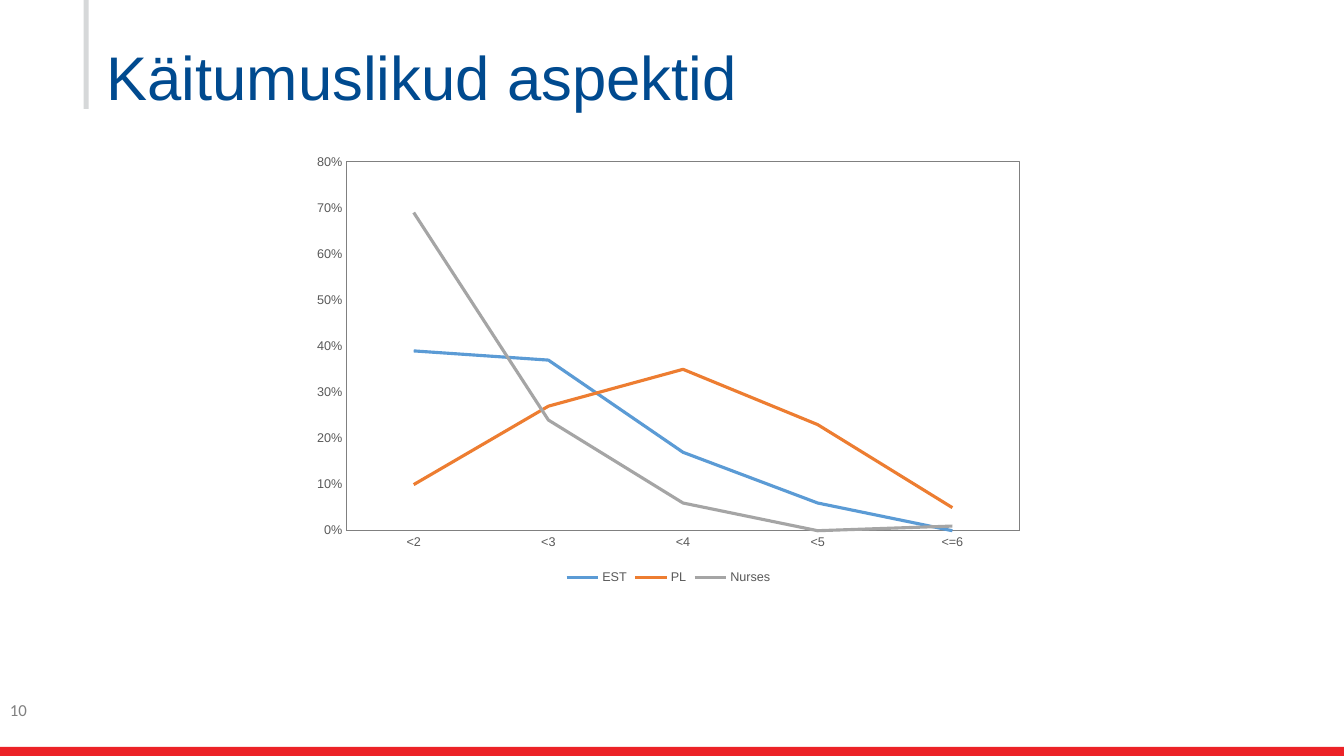
from lxml import etree
from pptx import Presentation
from pptx.chart.data import CategoryChartData
from pptx.dml.color import RGBColor
from pptx.enum import chart as ch, shapes, text
from pptx.util import Inches, Pt

RED = RGBColor(0xEC, 0x22, 0x27)
RULE_GREY = RGBColor(0xD6, 0xD8, 0xD9)
TITLE_BLUE = RGBColor(0x00, 0x4A, 0x8F)
MID_GREY = RGBColor(0x80, 0x80, 0x80)
LABEL_GREY = RGBColor(0x59, 0x59, 0x59)
BLACK = RGBColor(0, 0, 0)

WIDTH, HEIGHT = 13.33, 7.5
AGES = ["<2", "<3", "<4", "<5", "<=6"]
SERIES = [
    ("EST", RGBColor(0x5B, 0x9B, 0xD5), [0.39, 0.37, 0.17, 0.06, 0]),
    ("PL", RGBColor(0xED, 0x7D, 0x31), [0.1, 0.27, 0.35, 0.23, 0.05]),
    ("Nurses", RGBColor(0xA5, 0xA5, 0xA5), [0.69, 0.24, 0.06, 0, 0.01]),
]


def set_font(font, size, color, name="Arial"):
    font.size, font.name, font.bold = Pt(size), name, False
    font.color.rgb = color


def add_bar(s, box, color):
    bar = s.shapes.add_shape(shapes.MSO_SHAPE.RECTANGLE, *map(Inches, box))
    bar.shadow.inherit = False
    bar.fill.solid()
    bar.fill.fore_color.rgb = color
    bar.line.fill.background()


def add_text(s, box, words, *, size, color, name="Arial", spacing=1.0):
    tf = s.shapes.add_textbox(*map(Inches, box)).text_frame
    tf.word_wrap = True
    tf.vertical_anchor = text.MSO_ANCHOR.TOP
    p = tf.paragraphs[0]
    p.line_spacing = spacing
    r = p.add_run()
    r.text = words
    set_font(r.font, size, color, name)


def style_plot_area(chart, left, top, width, height):
    """Fix the inner plot area, as shares of the chart, and outline it."""
    plot_area = chart.element.chart.plotArea
    ns = plot_area.nsmap["c"]
    for old in plot_area.findall(f"{{{ns}}}layout"):
        plot_area.remove(old)
    plot_area.insert(0, etree.fromstring(
        f'<c:layout xmlns:c="{ns}"><c:manualLayout>'
        '<c:layoutTarget val="inner"/><c:xMode val="edge"/><c:yMode val="edge"/>'
        f'<c:x val="{left}"/><c:y val="{top}"/>'
        f'<c:w val="{width}"/><c:h val="{height}"/>'
        '</c:manualLayout></c:layout>'))
    plot_area.append(etree.fromstring(
        f'<c:spPr xmlns:c="{ns}" xmlns:a="{plot_area.nsmap["a"]}">'
        '<a:noFill/><a:ln w="9525"><a:solidFill>'
        f'<a:srgbClr val="{MID_GREY}"/></a:solidFill></a:ln></c:spPr>'))


def add_line_chart(s, box):
    data = CategoryChartData(number_format="0%")
    data.categories = AGES
    for name, _, values in SERIES:
        data.add_series(name, values)
    chart = s.shapes.add_chart(ch.XL_CHART_TYPE.LINE, *map(Inches, box), data).chart
    chart.has_title = False
    set_font(chart.font, 10, BLACK)

    # Axes
    for axis in (chart.category_axis, chart.value_axis):
        axis.major_tick_mark = axis.minor_tick_mark = ch.XL_TICK_MARK.NONE
        axis.has_major_gridlines = False
        set_font(axis.tick_labels.font, 9, LABEL_GREY)
    chart.category_axis.format.line.color.rgb = MID_GREY
    chart.category_axis.format.line.width = Pt(0.75)
    values = chart.value_axis
    values.minimum_scale, values.maximum_scale, values.major_unit = 0, 0.8, 0.1
    values.tick_labels.number_format = "0%"
    values.tick_labels.number_format_is_linked = False
    values.format.line.fill.background()

    # Lines
    for line, (_, color, _) in zip(chart.plots[0].series, SERIES):
        line.smooth = False
        line.marker.style = ch.XL_MARKER_STYLE.NONE
        line.format.line.color.rgb = color
        line.format.line.width = Pt(2.25)

    # Legend
    chart.has_legend = True
    chart.legend.position = ch.XL_LEGEND_POSITION.BOTTOM
    chart.legend.include_in_layout = False
    set_font(chart.legend.font, 9, LABEL_GREY)
    style_plot_area(chart, 0.06, 0.04, 0.92, 0.83)


def add_header(s, left, height):
    add_bar(s, (left, 0, 0.05, height), RULE_GREY)
    add_text(s, (left + 0.13, 0.42, 11.5, 1.01), "Käitumuslikud aspektid",
             size=44, color=TITLE_BLUE, spacing=0.9)


def add_footer(s, top):
    add_text(s, (0, top, 3, 0.4), "10", size=12, color=MID_GREY, name="Calibri")
    add_bar(s, (0, HEIGHT - 0.09, WIDTH, 0.09), RED)


def main():
    prs = Presentation()
    prs.slide_width, prs.slide_height = Inches(WIDTH), Inches(HEIGHT)
    s = prs.slides.add_slide(prs.slide_layouts[6])
    add_header(s, 0.83, 1.08)
    add_line_chart(s, (3, 1.43, 7.26, 4.41))
    add_footer(s, 6.89)
    prs.save("out.pptx")


if __name__ == "__main__":
    main()
